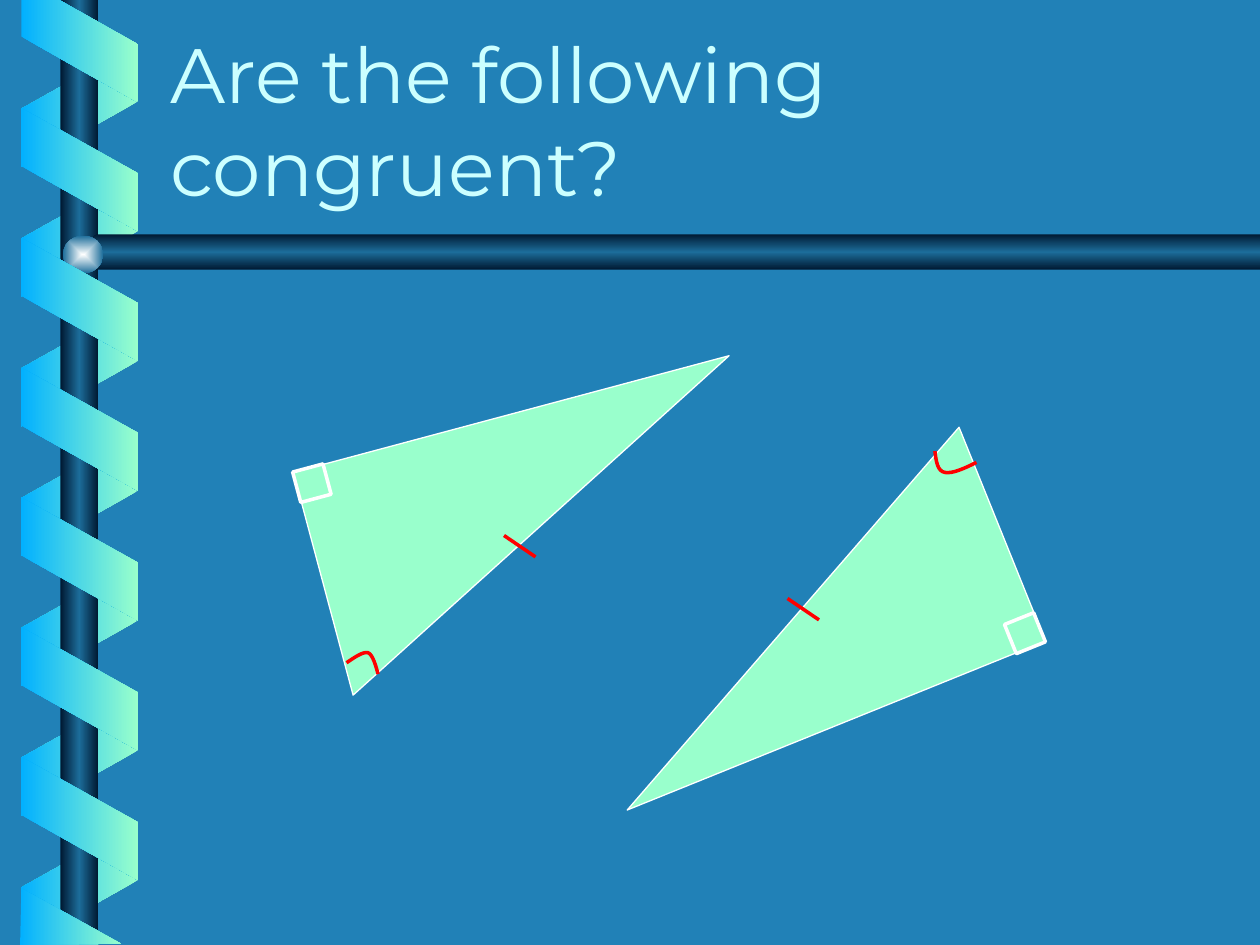
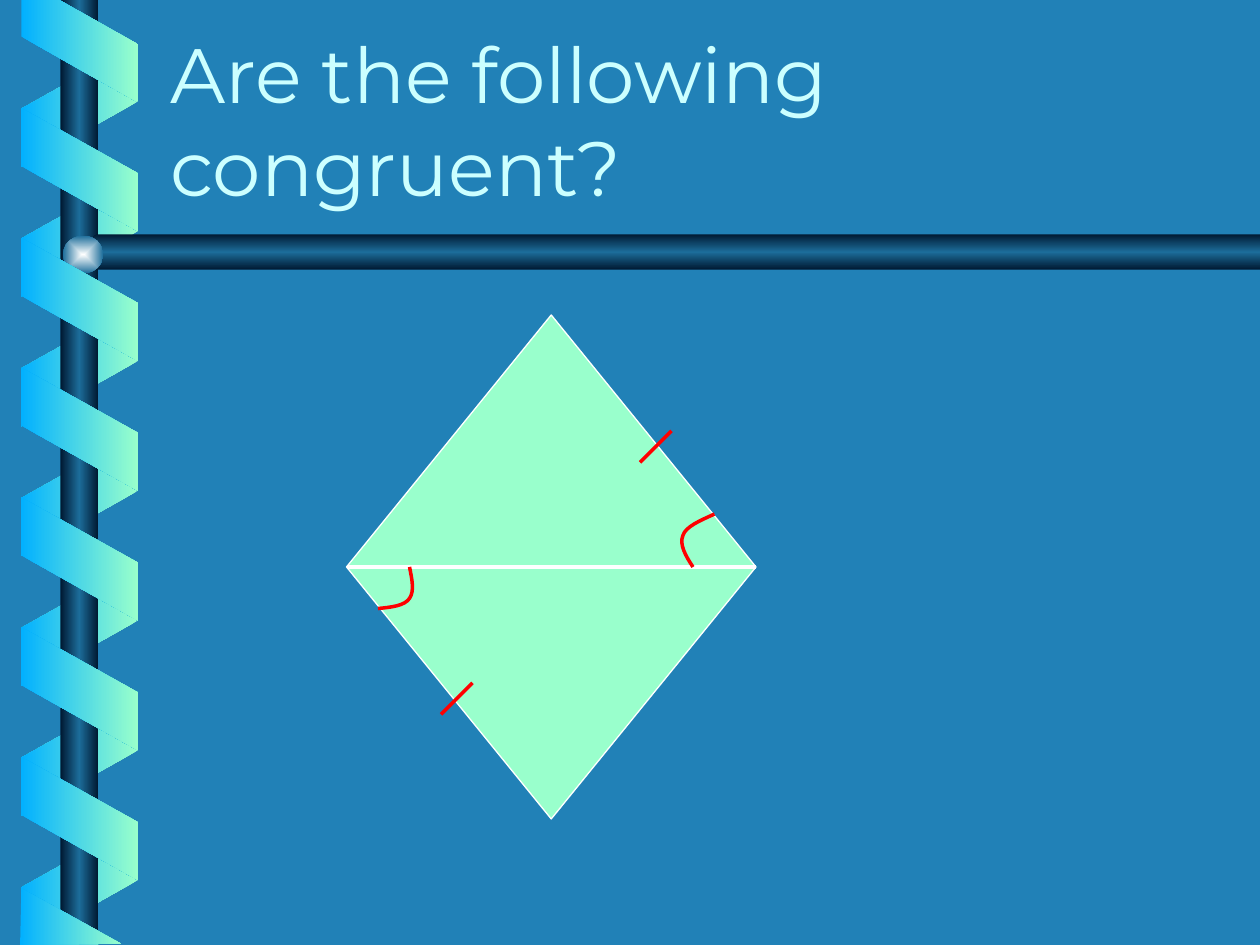
from lxml import etree
from pptx import Presentation
from pptx.dml.color import RGBColor
from pptx.enum.shapes import MSO_CONNECTOR, MSO_SHAPE
from pptx.enum.text import MSO_ANCHOR, PP_ALIGN
from pptx.oxml.ns import qn
from pptx.util import Inches, Pt

PARALLELOGRAM = MSO_SHAPE.PARALLELOGRAM
RECTANGLE = MSO_SHAPE.RECTANGLE
PENTAGON = MSO_SHAPE.PENTAGON
OVAL = MSO_SHAPE.OVAL
RIGHT_TRIANGLE = MSO_SHAPE.RIGHT_TRIANGLE
DIAMOND = MSO_SHAPE.DIAMOND
STRAIGHT = MSO_CONNECTOR.STRAIGHT
BOTTOM = MSO_ANCHOR.BOTTOM
LEFT = PP_ALIGN.LEFT

BACKGROUND = RGBColor(0x21, 0x81, 0xB7)
MINT = RGBColor(0x99, 0xFF, 0xCC)
SKY = RGBColor(0x01, 0xB0, 0xFF)
NAVY = RGBColor(0x00, 0x19, 0x32)
STEEL = RGBColor(0x1C, 0x6D, 0x9A)
GLOW = RGBColor(0xFE, 0xFF, 0xFF)
WHITE = RGBColor(0xFF, 0xFF, 0xFF)
RED = RGBColor(0xFF, 0x00, 0x00)
TITLE_COLOR = RGBColor(0xCC, 0xFF, 0xFF)

FONT = "Montserrat"
TITLE = "Are the following congruent?"
RIBBON = [SKY, MINT]
POLE = [NAVY, STEEL, NAVY]
RIBBON_STEP = 1.03
MARK_WIDTH = 2


def set_gradient(sp, colors, angle=0, radial=False):
    spPr = sp.element.spPr
    grad = etree.Element(qn("a:gradFill"), rotWithShape="0")
    stops = etree.SubElement(grad, qn("a:gsLst"))
    for i, color in enumerate(colors):
        pos = 100000 * i // (len(colors) - 1)
        gs = etree.SubElement(stops, qn("a:gs"), pos=str(pos))
        etree.SubElement(gs, qn("a:srgbClr"), val=str(color))
    if radial:
        center = etree.SubElement(grad, qn("a:path"))
        center.set("path", "shape")
        etree.SubElement(center, qn("a:fillToRect"),
                         l="50000", t="50000", r="50000", b="50000")
    else:
        etree.SubElement(grad, qn("a:lin"), ang=str(angle * 60000), scaled="1")
    geometry = spPr.find(qn("a:prstGeom"))
    if geometry is None:
        geometry = spPr.find(qn("a:custGeom"))
    geometry.addnext(grad)


def format_shape(sp, fill=None, line=None, width=0.75):
    sp.shadow.inherit = False
    if fill is None:
        sp.fill.background()
    else:
        sp.fill.solid()
        sp.fill.fore_color.rgb = fill
    if line is None:
        sp.line.fill.background()
    else:
        sp.line.color.rgb = line
        sp.line.width = Pt(width)


def add_figure(slide, kind, box, rotation=0, width=0.75):
    sp = slide.shapes.add_shape(kind, *map(Inches, box))
    sp.rotation = rotation
    format_shape(sp, MINT, WHITE, width)


def add_gradient_shape(slide, kind, box, colors, rotation=0, flip=False,
                       adj=None, **gradient):
    sp = slide.shapes.add_shape(kind, *map(Inches, box))
    sp.rotation = rotation
    if adj is not None:
        sp.adjustments[0] = adj
    if flip:
        sp.element.spPr.find(qn("a:xfrm")).set("flipH", "1")
    sp.shadow.inherit = False
    sp.line.fill.background()
    set_gradient(sp, colors, **gradient)


def add_outline(slide, points, close):
    points = [(Inches(x), Inches(y)) for x, y in points]
    builder = slide.shapes.build_freeform(*points[0])
    builder.add_line_segments(points[1:], close=close)
    return builder.convert_to_shape()


def add_ribbon_end(slide, points):
    sp = add_outline(slide, points, True)
    sp.shadow.inherit = False
    sp.line.fill.background()
    set_gradient(sp, RIBBON)


def add_angle_arc(slide, points):
    sp = add_outline(slide, points, False)
    format_shape(sp, line=RED, width=MARK_WIDTH)
    segments = list(sp.element.iter(qn("a:lnTo")))
    for i in range(0, len(segments), 3):
        curve = etree.Element(qn("a:cubicBezTo"))
        segments[i].addprevious(curve)
        for segment in segments[i:i + 3]:
            curve.append(segment[0])
            segment.getparent().remove(segment)


def add_line(slide, start, end, color=RED):
    ends = [Inches(v) for v in (*start, *end)]
    line = slide.shapes.add_connector(STRAIGHT, *ends)
    line.line.color.rgb = color
    line.line.width = Pt(MARK_WIDTH)
    etree.SubElement(line.element.spPr, qn("a:effectLst"))


def write_text(tf, text, size, color, font=FONT, align=LEFT, anchor=BOTTOM):
    tf.word_wrap = True
    tf.vertical_anchor = anchor
    p = tf.paragraphs[0]
    p.alignment = align
    r = p.add_run()
    r.text = text
    r.font.name = font
    r.font.size = Pt(size)
    r.font.color.rgb = color


def add_title_slide(prs, layout):
    slide = prs.slides.add_slide(layout)
    sp = slide.shapes.title
    sp.left, sp.top, sp.width, sp.height = map(Inches, (1.25, 0.16, 8.5, 1.57))
    write_text(sp.text_frame, TITLE, 44, TITLE_COLOR)
    return slide


def add_ribbon(slide, top, count, colors, rotation, flip=False):
    for i in range(count):
        box = (0.14, top + i * RIBBON_STEP, 0.98, 0.93)
        add_gradient_shape(slide, PARALLELOGRAM, box, colors, rotation, flip, 0.56)


def decorate_layout(layout, slide):
    layout.background.fill.solid()
    layout.background.fill.fore_color.rgb = BACKGROUND
    add_ribbon(slide, 0.37, 7, RIBBON[::-1], 90, flip=True)
    add_gradient_shape(slide, RECTANGLE, (0.48, 0, 0.3, 7.5), POLE)
    add_gradient_shape(slide, PENTAGON, (0.6, 1.86, 9.4, 0.28), POLE,
                       flip=True, adj=0.59, angle=90)
    add_gradient_shape(slide, OVAL, (0.5, 1.87, 0.32, 0.3), [GLOW, STEEL], radial=True)
    add_ribbon(slide, 0.88, 6, RIBBON, 270)
    add_ribbon_end(slide, [(0.17, 0), (0.17, 0.29), (1.09, 0.81), (1.09, 0.35), (0.47, 0)])
    add_ribbon_end(slide, [(0.96, 7.49), (0.17, 7.05), (0.16, 7.5)])

    title, *footers = layout.placeholders
    tree = title.element.getparent()
    for ph in footers:
        tree.remove(ph.element)
    for sp in list(slide.shapes):
        if not sp.is_placeholder:
            tree.append(sp.element)


def draw_right_triangles(slide):
    add_figure(slide, RIGHT_TRIANGLE, (3.38, 2.38, 1.83, 3.58), 75)
    add_figure(slide, RECTANGLE, (2.35, 3.71, 0.25, 0.25), 75, MARK_WIDTH)
    add_figure(slide, RIGHT_TRIANGLE, (5.38, 3.12, 1.83, 3.58), 248)
    add_figure(slide, RECTANGLE, (8.01, 4.9, 0.25, 0.25), 248, MARK_WIDTH)
    add_angle_arc(slide, [(2.75, 5.26), (2.81, 5.22), (2.88, 5.17), (2.92, 5.18),
                          (2.96, 5.19), (2.99, 5.31), (3, 5.35)])
    add_angle_arc(slide, [(7.42, 3.58), (7.43, 3.66), (7.44, 3.74), (7.5, 3.75),
                          (7.56, 3.76), (7.65, 3.72), (7.75, 3.67)])
    for x, y in [(4, 4.25), (6.25, 4.75)]:
        add_line(slide, (x, y), (x + 0.25, y + 0.17))


def draw_split_diamond(slide):
    add_figure(slide, DIAMOND, (2.75, 2.5, 3.25, 4))
    add_line(slide, (2.75, 4.5), (6, 4.5), WHITE)
    for x, y in [(3.75, 5.42), (5.33, 3.42)]:
        add_line(slide, (x, y), (x - 0.25, y + 0.25))
    add_angle_arc(slide, [(3, 4.83), (3.1, 4.82), (3.21, 4.81), (3.25, 4.75),
                          (3.29, 4.69), (3.27, 4.6), (3.25, 4.5)])
    add_angle_arc(slide, [(5.5, 4.5), (5.44, 4.41), (5.39, 4.32), (5.42, 4.25),
                          (5.44, 4.18), (5.56, 4.13), (5.67, 4.08)])


def main():
    prs = Presentation()
    prs.slide_width = Inches(10)
    prs.slide_height = Inches(7.5)
    layout = prs.slide_layouts.get_by_name("Title Only")
    triangles = add_title_slide(prs, layout)
    decorate_layout(layout, triangles)
    draw_right_triangles(triangles)
    draw_split_diamond(add_title_slide(prs, layout))
    prs.save("out.pptx")


if __name__ == "__main__":
    main()
